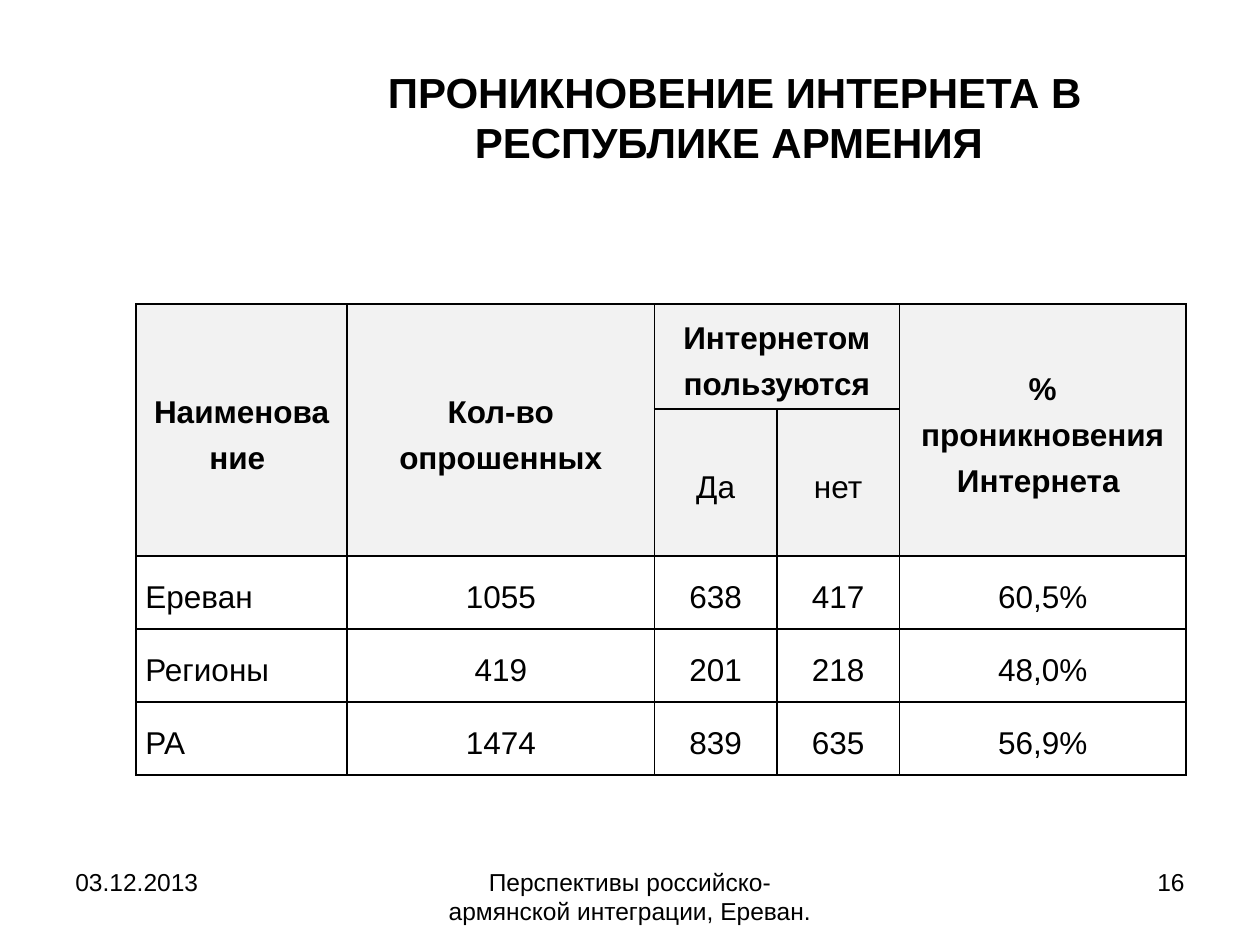
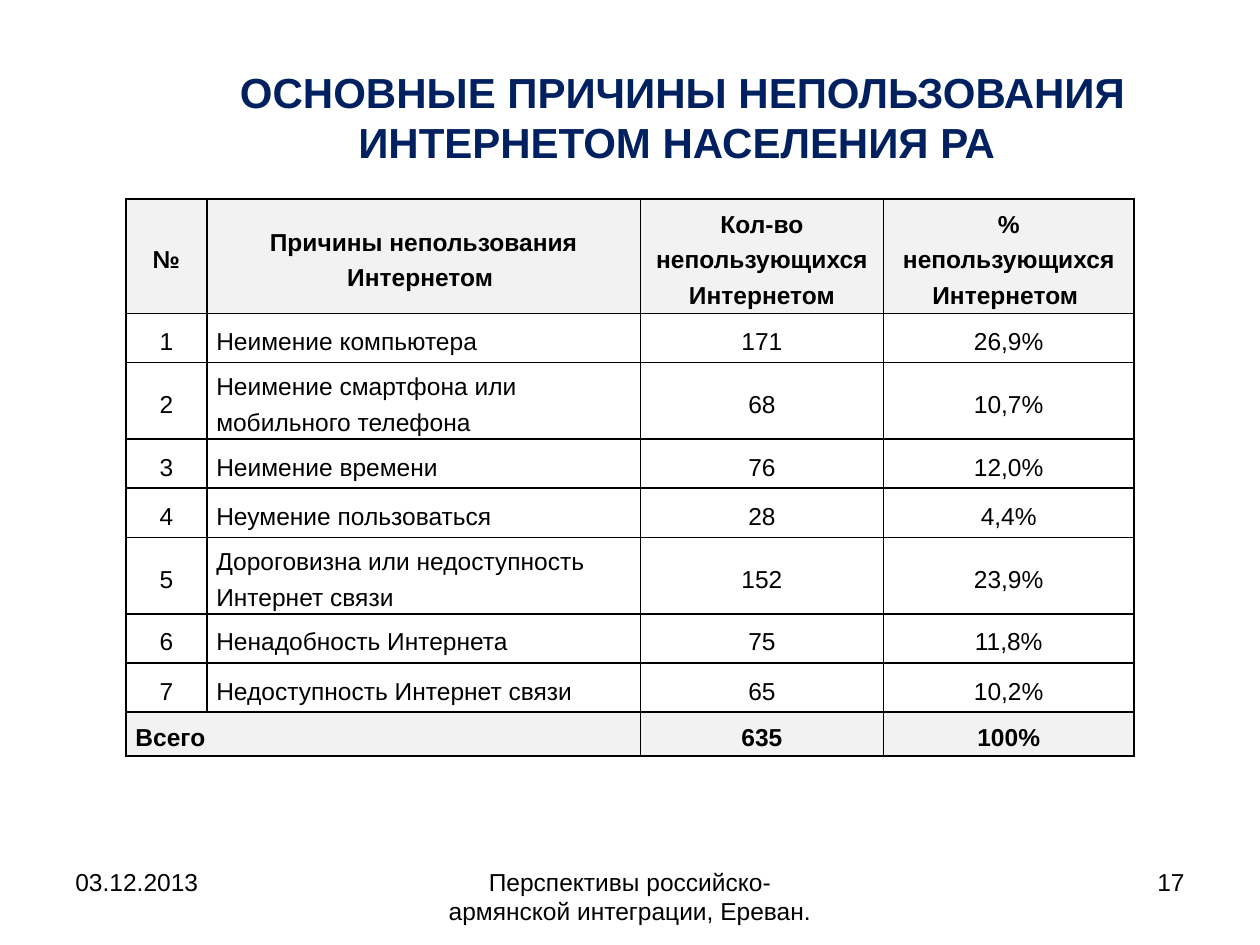
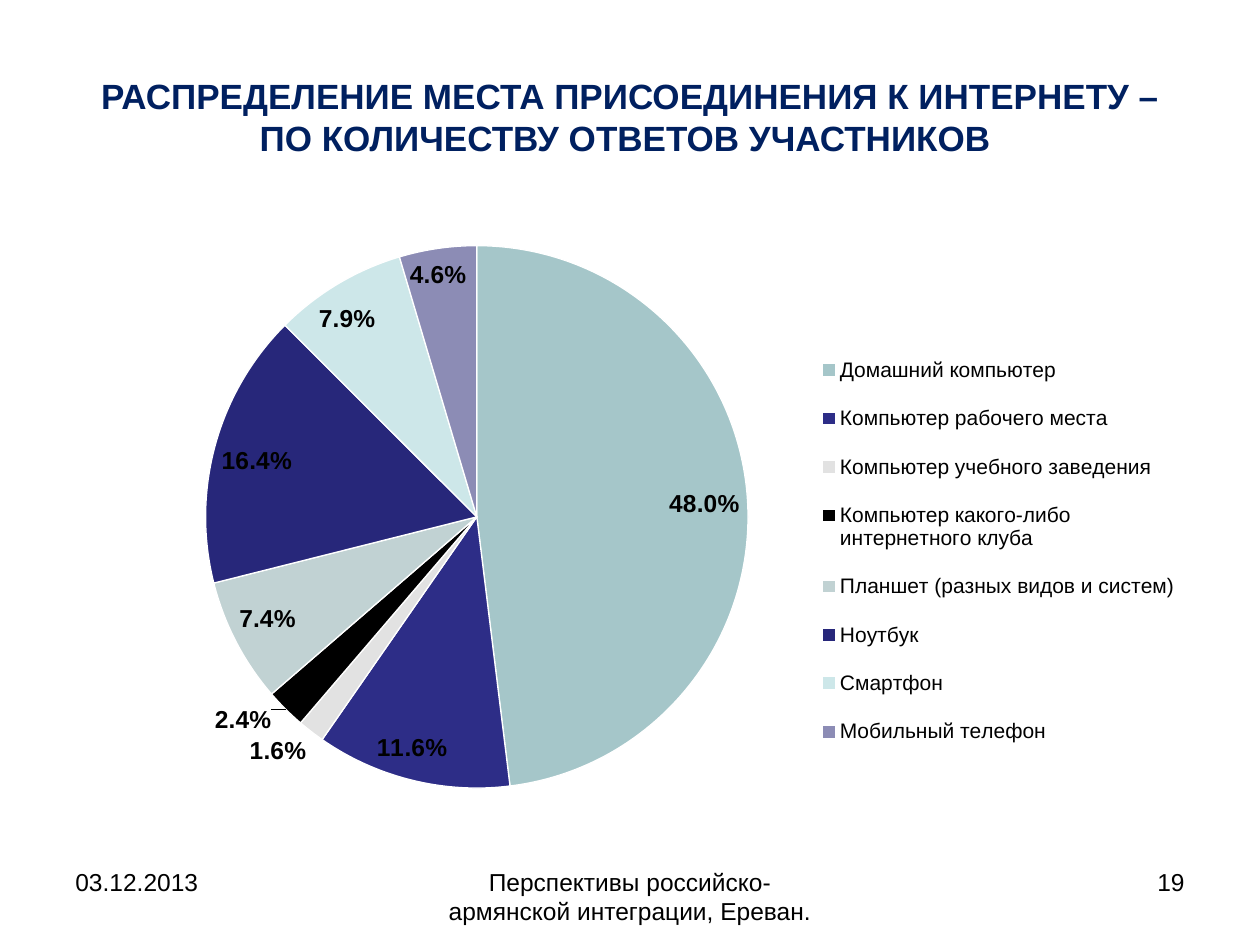
from lxml import etree
from pptx import Presentation
from pptx.chart.data import CategoryChartData
from pptx.dml.color import RGBColor
from pptx.enum.chart import XL_CHART_TYPE, XL_LABEL_POSITION, XL_LEGEND_POSITION
from pptx.enum.text import MSO_ANCHOR, PP_ALIGN
from pptx.oxml import parse_xml
from pptx.oxml.ns import nsdecls, qn
from pptx.util import Cm, Pt

LEFT, CENTER, RIGHT = PP_ALIGN.LEFT, PP_ALIGN.CENTER, PP_ALIGN.RIGHT
TOP, MIDDLE = MSO_ANCHOR.TOP, MSO_ANCHOR.MIDDLE
PIE = XL_CHART_TYPE.PIE
BEST_FIT = XL_LABEL_POSITION.BEST_FIT
LEGEND_RIGHT = XL_LEGEND_POSITION.RIGHT


class Theme:
    font = "Arial"
    black = RGBColor(0x00, 0x00, 0x00)
    white = RGBColor(0xFF, 0xFF, 0xFF)
    navy = RGBColor(0x00, 0x20, 0x60)
    shade = RGBColor(0xF2, 0xF2, 0xF2)
    slices = ["A5C6C9", "2D2D87", "E2E2E2", "000000",
              "C1D2D3", "27277A", "CDE7E9", "8C8CB5"]
    title_size = 24
    long_title_size = 20
    large_table_size = 18
    small_table_size = 14
    footer_size = 14
    label_size = 14
    legend_size = 12


def add_text(slide, box, text, size, color=Theme.black, bold=False,
             alignment=CENTER, anchor=MIDDLE):
    text_frame = slide.shapes.add_textbox(*(Cm(length) for length in box)).text_frame
    text_frame.word_wrap = True
    text_frame.vertical_anchor = anchor
    text_frame.text = text
    for paragraph in text_frame.paragraphs:
        paragraph.alignment = alignment
        for run in paragraph.runs:
            run.font.name = Theme.font
            run.font.size = Pt(size)
            run.font.bold = bold
            run.font.color.rgb = color


def add_grid(slide, left, top, widths, heights, rows, size,
             shaded_rows, bold_rows, left_cells, merges):
    frame = slide.shapes.add_table(len(rows), len(widths), Cm(left), Cm(top),
                                   Cm(sum(widths)), Cm(sum(heights)))
    table = frame.table
    table.first_row = table.horz_banding = False
    for column, width in zip(table.columns, widths):
        column.width = Cm(width)
    for row, height in zip(table.rows, heights):
        row.height = Cm(height)
    for first, last in merges:
        table.cell(*first).merge(table.cell(*last))

    for row_index, row in enumerate(rows):
        for column_index, text in enumerate(row):
            cell = table.cell(row_index, column_index)
            cell.margin_left = cell.margin_right = Cm(0.19)
            cell.margin_top = cell.margin_bottom = 0
            cell.vertical_anchor = MIDDLE
            for side in ("lnL", "lnR", "lnT", "lnB"):
                cell._tc.get_or_add_tcPr().append(parse_xml(
                    f'<a:{side} {nsdecls("a")} w="12700"><a:solidFill>'
                    f'<a:srgbClr val="{Theme.black}"/></a:solidFill></a:{side}>'))
            if row_index in shaded_rows:
                cell.fill.solid()
                cell.fill.fore_color.rgb = Theme.shade
            else:
                cell.fill.background()
            if cell.is_spanned:
                continue
            paragraph = cell.text_frame.paragraphs[0]
            paragraph.text = text
            paragraph.alignment = LEFT if (row_index, column_index) in left_cells else CENTER
            paragraph.line_spacing = 1.3
            paragraph.font.name = Theme.font
            paragraph.font.size = Pt(size)
            paragraph.font.color.rgb = Theme.black
            paragraph.font.bold = row_index in bold_rows


presentation = Presentation()
presentation.slide_width = Cm(25.4)
presentation.slide_height = Cm(19.05)

# Titles and footers of all slides: title, box, size, colour, slide number
headings = [
    ("ПРОНИКНОВЕНИЕ ИНТЕРНЕТА В РЕСПУБЛИКЕ АРМЕНИЯ ",
     (5.5, 1.19, 18.63, 2.32), Theme.title_size, Theme.black, "16"),
    ("ОСНОВНЫЕ ПРИЧИНЫ НЕПОЛЬЗОВАНИЯ ИНТЕРНЕТОМ НАСЕЛЕНИЯ РА ",
     (3.39, 0.76, 20.74, 3.18), Theme.title_size, Theme.navy, "17"),
    ("РАСПРЕДЕЛЕНИЕ МЕСТА ПРИСОЕДИНЕНИЯ К ИНТЕРНЕТУ –\nПО КОЛИЧЕСТВУ ОТВЕТОВ УЧАСТНИКОВ ",
     (1.27, 0.76, 22.86, 3.18), Theme.long_title_size, Theme.navy, "19"),
]
slides = []
for title, title_box, title_size, title_color, number in headings:
    slide = presentation.slides.add_slide(presentation.slide_layouts[6])
    slides.append(slide)
    add_text(slide, title_box, title, title_size, title_color, bold=True)
    footers = [
        (1.27, 5.93, "03.12.2013", LEFT),
        (8.68, 8.04, "Перспективы российско-армянской интеграции, Ереван.", CENTER),
        (18.2, 5.93, number, RIGHT),
    ]
    for left, width, text, alignment in footers:
        add_text(slide, (left, 17.35, width, 1.32), text, Theme.footer_size,
                 alignment=alignment, anchor=TOP)
penetration_slide, reasons_slide, places_slide = slides

# Internet penetration table
penetration_rows = [
    ["Наименование ", "Кол-во опрошенных", "Интернетом пользуются", "",
     "% проникновения Интернета "],
    ["", "", "Да", "нет", ""],
    ["Ереван", "1055", "638", "417", "60,5%"],
    ["Регионы", "419", "201", "218", "48,0%"],
    ["РА", "1474", "839", "635", "56,9%"],
]
add_grid(penetration_slide, 2.74, 6.13, [4.26, 6.19, 2.47, 2.47, 5.78],
         [2.11, 1.57] + [1.47] * 3, penetration_rows, Theme.large_table_size,
         shaded_rows={0, 1}, bold_rows={0},
         left_cells={(row, 0) for row in range(2, 5)},
         merges=[((0, column), (1, column)) for column in (0, 1, 4)] + [((0, 2), (0, 3))])

# Reasons table: the rows are numbered and a total closes it
reasons = [
    ("Неимение компьютера", "171", "26,9%"),
    ("Неимение смартфона или мобильного телефона", "68", "10,7%"),
    ("Неимение времени", "76", "12,0%"),
    ("Неумение пользоваться", "28", "4,4%"),
    ("Дороговизна или недоступность Интернет связи", "152", "23,9%"),
    ("Ненадобность Интернета", "75", "11,8%"),
    ("Недоступность Интернет связи", "65", "10,2%"),
]
total_row = len(reasons) + 1
reason_rows = [
    ["№", "Причины непользования Интернетом ", "Кол-во непользующихся Интернетом",
     "% непользующихся Интернетом "],
    *([str(number), *reason] for number, reason in enumerate(reasons, 1)),
    ["Всего", "", "635", "100%"],
]
add_grid(reasons_slide, 2.54, 4.01, [1.63, 8.74, 4.9, 5.05],
         [1.57] + [0.99] * len(reasons) + [0.89], reason_rows, Theme.small_table_size,
         shaded_rows={0, total_row}, bold_rows={0, total_row},
         left_cells={(row, 1) for row in range(1, total_row)} | {(total_row, 0)},
         merges=[((total_row, 0), (total_row, 1))])

# Pie of connection places
places = {
    "Домашний компьютер": 0.48,
    "Компьютер рабочего места": 0.116,
    "Компьютер учебного заведения": 0.016,
    "Компьютер какого-либо интернетного клуба": 0.024,
    "Планшет (разных видов и систем)": 0.074,
    "Ноутбук": 0.164,
    "Смартфон": 0.079,
    "Мобильный телефон": 0.046,
}
chart_data = CategoryChartData(number_format="0.0%")
chart_data.categories = list(places)
chart_data.add_series("Series 1", list(places.values()))
chart = places_slide.shapes.add_chart(PIE, Cm(1.27), Cm(4.45), Cm(22.86), Cm(12.57),
                                      chart_data).chart
chart.has_title = False
chart.font.name = Theme.font
chart.font.size = Pt(Theme.legend_size)
chart.font.color.rgb = Theme.black
chart.has_legend = True
chart.legend.position = LEGEND_RIGHT
chart.legend.include_in_layout = False
chart.legend.font.size = Pt(Theme.legend_size)

plot = chart.plots[0]
plot.vary_by_categories = True
for index, color in enumerate(Theme.slices):
    slice_format = plot.series[0].points[index].format
    slice_format.fill.solid()
    slice_format.fill.fore_color.rgb = RGBColor.from_string(color)
    slice_format.line.color.rgb = Theme.white
    slice_format.line.width = Pt(0.75)

plot.has_data_labels = True
labels = plot.data_labels
labels.show_value = True
labels.show_percentage = False
labels.number_format = "0.0%"
labels.number_format_is_linked = False
labels.position = BEST_FIT
labels.font.name = Theme.font
labels.font.size = Pt(Theme.label_size)
labels.font.bold = True
labels.font.color.rgb = Theme.black

# Fixed places of the pie and the legend, as shares of the chart
plot_area = chart._chartSpace.chart.plotArea
legend = chart.legend._element
for old_layout in plot_area.findall(qn("c:layout")) + legend.findall(qn("c:layout")):
    old_layout.getparent().remove(old_layout)
for parent, position, target, shares in [
    (plot_area, 0, "inner", (0.1, 0.04, 0.53, 0.87)),
    (legend, 1, None, (0.66, 0.18, 0.33, 0.7)),
]:
    layout = parse_xml(f'<c:layout {nsdecls("c")}><c:manualLayout/></c:layout>')
    settings = [("layoutTarget", target)] if target else []
    settings += [("xMode", "edge"), ("yMode", "edge"), *zip("xywh", shares)]
    for name, value in settings:
        etree.SubElement(layout[0], qn(f"c:{name}")).set("val", str(value))
    parent.insert(position, layout)

presentation.save("out.pptx")
